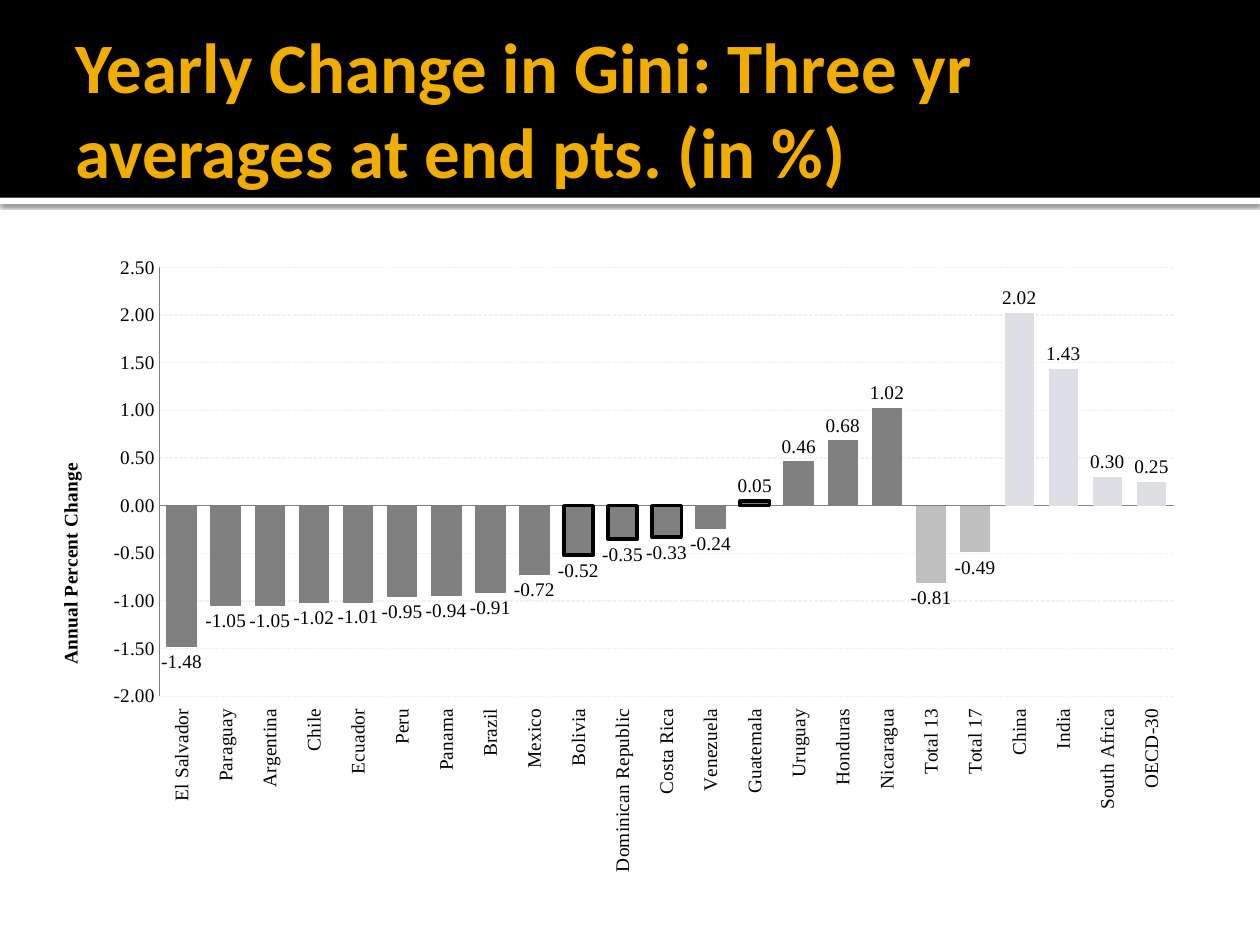
from dataclasses import dataclass

import lxml.etree
import pptx
import pptx.chart.data
import pptx.dml.color
import pptx.enum.chart
import pptx.enum.dml
import pptx.enum.shapes
import pptx.enum.text
import pptx.oxml
import pptx.oxml.ns
import pptx.util
from pptx.util import Inches

COLORS = {
    "white": "FFFFFF",
    "black": "000000",
    "title": "F0AD00",
    "country": "808080",
    "total": "BFBFBF",
    "comparison": "DDDFE5",
    "grid": "F2F2F2",
}
CHART_FONT = "Times New Roman"


@dataclass
class Band:
    top: float
    height: float
    color: str
    has_shadow: bool = False


@dataclass
class Bar:
    name: str
    change: float
    group: str = "country"
    outlined: bool = False


BANDS = [Band(1.57, 0.05, "white", has_shadow=True), Band(0, 1.57, "black")]

BARS = [
    Bar("El Salvador", -1.48),
    Bar("Paraguay", -1.05),
    Bar("Argentina", -1.05),
    Bar("Chile", -1.02),
    Bar("Ecuador", -1.01),
    Bar("Peru", -0.95),
    Bar("Panama", -0.94),
    Bar("Brazil", -0.91),
    Bar("Mexico", -0.72),
    Bar("Bolivia", -0.52, outlined=True),
    Bar("Dominican Republic", -0.35, outlined=True),
    Bar("Costa Rica", -0.33, outlined=True),
    Bar("Venezuela", -0.24),
    Bar("Guatemala", 0.05, outlined=True),
    Bar("Uruguay", 0.46),
    Bar("Honduras", 0.68),
    Bar("Nicaragua", 1.02),
    Bar("Total 13", -0.81, "total"),
    Bar("Total 17", -0.49, "total"),
    Bar("China", 2.02, "comparison"),
    Bar("India", 1.43, "comparison"),
    Bar("South Africa", 0.30, "comparison"),
    Bar("OECD-30", 0.25, "comparison"),
]


def rgb(name: str) -> pptx.dml.color.RGBColor:
    return pptx.dml.color.RGBColor.from_string(COLORS[name])


def set_attributes(target, values: dict) -> None:
    for name, value in values.items():
        setattr(target, name, value)


def format_font(font, color: str, **values) -> None:
    set_attributes(font, values)
    font.color.rgb = rgb(color)


def format_line(line, color: str, width: float) -> None:
    line.color.rgb = rgb(color)
    line.width = pptx.util.Pt(width)


def add_band(slide, band: Band) -> None:
    shape = slide.shapes.add_shape(
        pptx.enum.shapes.MSO_SHAPE.RECTANGLE,
        Inches(0), Inches(band.top), Inches(10), Inches(band.height))
    shape.fill.solid()
    shape.fill.fore_color.rgb = rgb(band.color)
    shape.line.fill.background()
    shape.shadow.inherit = False
    if band.has_shadow:
        effects = shape.element.spPr.find(pptx.oxml.ns.qn("a:effectLst"))
        effects.append(pptx.oxml.parse_xml(
            f'<a:outerShdw {pptx.oxml.ns.nsdecls("a")} blurRad="31750" dist="10160" '
            'dir="5400000" algn="tl" rotWithShape="0">'
            f'<a:srgbClr val="{COLORS["black"]}"><a:alpha val="60000"/></a:srgbClr>'
            '</a:outerShdw>'))


def add_title(slide, text: str) -> None:
    title = slide.shapes.title
    set_attributes(title, {
        "left": Inches(0.5), "top": Inches(0.17),
        "width": Inches(9), "height": Inches(1.37)})
    frame = title.text_frame
    set_attributes(frame, {
        "text": text,
        "word_wrap": True,
        "auto_size": pptx.enum.text.MSO_AUTO_SIZE.NONE,
        "vertical_anchor": pptx.enum.text.MSO_ANCHOR.MIDDLE,
        "margin_left": Inches(0.1), "margin_right": Inches(0.05),
        "margin_top": Inches(0.05), "margin_bottom": Inches(0.05)})
    paragraph = frame.paragraphs[0]
    paragraph.alignment = pptx.enum.text.PP_ALIGN.LEFT
    format_font(paragraph.runs[0].font, "title", name="Calibri",
                size=pptx.util.Pt(40.5), bold=True)
    # The title stands in front of the bands.
    title.element.getparent().append(title.element)


def set_layout(parent, index: int, **values) -> None:
    """Place a chart part by fractions of the chart's size."""
    for old_layout in parent.findall(pptx.oxml.ns.qn("c:layout")):
        parent.remove(old_layout)
    layout = pptx.oxml.parse_xml(
        f'<c:layout {pptx.oxml.ns.nsdecls("c")}><c:manualLayout/></c:layout>')
    for name, value in values.items():
        lxml.etree.SubElement(
            layout[0], pptx.oxml.ns.qn(f"c:{name}")).set("val", str(value))
    parent.insert(index, layout)


def format_axes(chart) -> None:
    category_axis, value_axis = chart.category_axis, chart.value_axis
    no_tick = pptx.enum.chart.XL_TICK_MARK.NONE
    for axis in (category_axis, value_axis):
        set_attributes(axis, {"major_tick_mark": no_tick, "minor_tick_mark": no_tick})
        format_line(axis.format.line, "country", 0.75)
    category_axis.tick_label_position = pptx.enum.chart.XL_TICK_LABEL_POSITION.LOW
    category_axis.tick_labels.font.size = pptx.util.Pt(11)
    rotation = category_axis._element.find(".//" + pptx.oxml.ns.qn("a:bodyPr"))
    rotation.set("rot", "-5400000")
    rotation.set("vert", "horz")

    set_attributes(value_axis, {
        "minimum_scale": -2, "maximum_scale": 2.5, "major_unit": 0.5,
        "has_major_gridlines": True})
    set_attributes(value_axis.tick_labels, {
        "number_format": "0.00", "number_format_is_linked": False})
    grid_line = value_axis.major_gridlines.format.line
    format_line(grid_line, "grid", 0.75)
    grid_line.dash_style = pptx.enum.dml.MSO_LINE.SQUARE_DOT

    frame = value_axis.axis_title.text_frame
    frame.text = "Annual Percent Change"
    format_font(frame.paragraphs[0].runs[0].font, "black", name=CHART_FONT,
                size=pptx.util.Pt(11), bold=True)
    body = frame._txBody.bodyPr
    body.set("rot", "-5400000")
    body.set("vert", "horz")
    set_layout(value_axis.axis_title._element, 1,
               xMode="edge", yMode="edge", x=0.02, y=0.34)


def format_bars(plot) -> None:
    set_attributes(plot, {
        "gap_width": 50, "vary_by_categories": False, "has_data_labels": True})
    set_attributes(plot.data_labels, {
        "show_value": True, "number_format": "0.00", "number_format_is_linked": False,
        "position": pptx.enum.chart.XL_LABEL_POSITION.OUTSIDE_END})
    format_font(plot.data_labels.font, "black", name=CHART_FONT, size=pptx.util.Pt(11))
    series = plot.series[0]
    series.invert_if_negative = False
    series.format.fill.solid()
    series.format.fill.fore_color.rgb = rgb("country")
    format_line(series.format.line, "country", 0.75)
    for index, bar in enumerate(BARS):
        if bar.group == "country" and not bar.outlined:
            continue
        point = series.points[index].format
        point.fill.solid()
        point.fill.fore_color.rgb = rgb(bar.group)
        if bar.outlined:
            format_line(point.line, "black", 2)
        else:
            point.line.fill.background()


def add_gini_chart(slide) -> None:
    data = pptx.chart.data.CategoryChartData(number_format="0.00")
    data.categories = [bar.name for bar in BARS]
    data.add_series("Series 1", [bar.change for bar in BARS])
    chart = slide.shapes.add_chart(
        pptx.enum.chart.XL_CHART_TYPE.COLUMN_CLUSTERED,
        Inches(0.25), Inches(1.92), Inches(9.25), Inches(5.08), data).chart
    set_attributes(chart, {"has_legend": False, "has_title": False})
    format_font(chart.font, "black", name=CHART_FONT, size=pptx.util.Pt(11))
    format_axes(chart)
    format_bars(chart.plots[0])
    set_layout(chart._chartSpace.chart.plotArea, 0, layoutTarget="inner",
               xMode="edge", yMode="edge", x=0.11, y=0.04, w=0.87, h=0.67)


def main() -> None:
    presentation = pptx.Presentation()
    set_attributes(presentation, {"slide_width": Inches(10), "slide_height": Inches(7.5)})
    slide = presentation.slides.add_slide(presentation.slide_layouts[5])
    for band in BANDS:
        add_band(slide, band)
    add_title(slide, "Yearly Change in Gini: Three yr averages at end pts. (in %)")
    add_gini_chart(slide)
    presentation.save("out.pptx")


if __name__ == "__main__":
    main()
